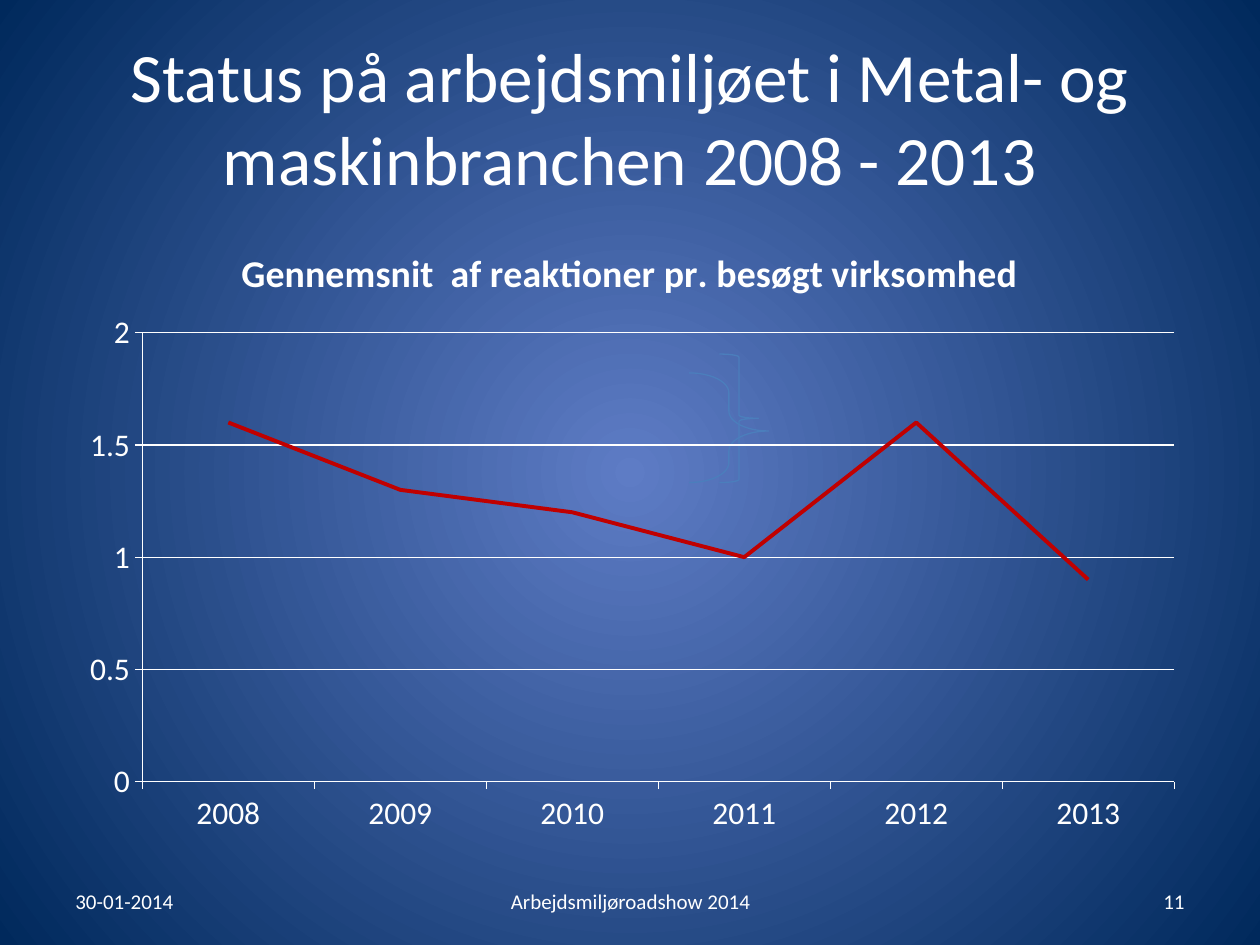
from dataclasses import dataclass

from lxml import etree
from pptx import Presentation
from pptx.chart.data import CategoryChartData
from pptx.dml.color import RGBColor
from pptx.enum.chart import XL_CHART_TYPE, XL_TICK_MARK
from pptx.enum.shapes import MSO_SHAPE
from pptx.enum.text import MSO_ANCHOR, PP_ALIGN
from pptx.oxml import parse_xml
from pptx.oxml.ns import nsdecls, qn
from pptx.slide import Slide
from pptx.util import Inches, Pt

LEFT, CENTER, RIGHT = PP_ALIGN.LEFT, PP_ALIGN.CENTER, PP_ALIGN.RIGHT
MIDDLE = MSO_ANCHOR.MIDDLE
RIGHT_BRACE = MSO_SHAPE.RIGHT_BRACE
LINE_STACKED = XL_CHART_TYPE.LINE_STACKED
TICK_OUTSIDE, TICK_NONE = XL_TICK_MARK.OUTSIDE, XL_TICK_MARK.NONE


@dataclass(frozen=True)
class Theme:
    font: str = "Calibri"
    text: RGBColor = RGBColor.from_string("FFFFFF")
    series: RGBColor = RGBColor.from_string("C00000")
    brace: RGBColor = RGBColor.from_string("4B7EBC")
    glow: RGBColor = RGBColor.from_string("5E7CC5")
    edge: RGBColor = RGBColor.from_string("00295C")
    title_size: float = 39.6
    chart_title_size: float = 21.6
    chart_size: float = 18
    footer_size: float = 12
    thin_line: float = 0.75
    series_line: float = 2.25


@dataclass(frozen=True)
class Frame:
    left: float
    top: float
    width: float
    height: float

    def lengths(self) -> tuple:
        return tuple(map(Inches, (self.left, self.top, self.width, self.height)))


@dataclass(frozen=True)
class Label:
    text: str
    frame: Frame
    size: float
    align: PP_ALIGN


@dataclass(frozen=True)
class Brace:
    frame: Frame
    curve: float
    tip: float


THEME = Theme()
FOOTER_TOP, FOOTER_HEIGHT = 6.95, 0.4

LABELS = (
    Label("Status på arbejdsmiljøet i Metal- og maskinbranchen 2008 - 2013",
          Frame(0.5, 0.3, 9, 1.25), THEME.title_size, CENTER),
    Label("30-01-2014", Frame(0.5, FOOTER_TOP, 2.33, FOOTER_HEIGHT),
          THEME.footer_size, LEFT),
    Label("Arbejdsmiljøroadshow 2014", Frame(3.42, FOOTER_TOP, 3.17, FOOTER_HEIGHT),
          THEME.footer_size, CENTER),
    Label("11", Frame(7.17, FOOTER_TOP, 2.33, FOOTER_HEIGHT),
          THEME.footer_size, RIGHT),
)
BRACES = (
    Brace(Frame(5.47, 2.96, 0.63, 0.87), 0.25, 0.53),
    Brace(Frame(5.71, 2.81, 0.31, 1.02), 0.08, 0.5),
)
CHART_FRAME = Frame(0.5, 1.75, 9, 4.95)
PLOT_AREA = {"x": 0.07, "y": 0.18, "w": 0.91, "h": 0.72}  # shares of the chart
CHART_TITLE = "Gennemsnit  af reaktioner pr. besøgt virksomhed"
REACTIONS = {"2008": 1.6, "2009": 1.3, "2010": 1.2,
             "2011": 1, "2012": 1.6, "2013": 0.9}


def style_font(font, size: float, bold: bool = False) -> None:
    font.name = THEME.font
    font.size = Pt(size)
    font.bold = bold
    font.color.rgb = THEME.text


def style_line(line, color: RGBColor, width: float) -> None:
    line.color.rgb = color
    line.width = Pt(width)


def paint_background(slide: Slide) -> None:
    fill = slide.background.fill
    fill.gradient()
    for stop, color in zip(fill.gradient_stops, (THEME.glow, THEME.edge)):
        stop.color.rgb = color
    # Radial gradient around the middle of the page
    gradient = next(slide.element.iter(qn("a:gradFill")))
    gradient.remove(gradient.find(qn("a:lin")))
    gradient.append(parse_xml(
        f'<a:path {nsdecls("a")} path="circle">'
        '<a:fillToRect l="50000" t="50000" r="50000" b="50000"/></a:path>'))


def add_label(slide: Slide, label: Label) -> None:
    box = slide.shapes.add_textbox(*label.frame.lengths())
    box.text_frame.word_wrap = True
    box.text_frame.vertical_anchor = MIDDLE
    para = box.text_frame.paragraphs[0]
    para.alignment = label.align
    span = para.add_run()
    span.text = label.text
    style_font(span.font, label.size)


def add_brace(slide: Slide, brace: Brace) -> None:
    shape = slide.shapes.add_shape(RIGHT_BRACE, *brace.frame.lengths())
    shape.shadow.inherit = False
    shape.fill.background()
    style_line(shape.line, THEME.brace, THEME.thin_line)
    shape.adjustments[0] = brace.curve
    shape.adjustments[1] = brace.tip


def fix_plot_area(chart) -> None:
    plot_area = next(chart.element.iter(qn("c:plotArea")))
    for old_layout in plot_area.findall(qn("c:layout")):
        plot_area.remove(old_layout)
    layout = etree.Element(qn("c:layout"))
    manual = etree.SubElement(layout, qn("c:manualLayout"))
    settings = {"layoutTarget": "inner", "xMode": "edge", "yMode": "edge", **PLOT_AREA}
    for name, value in settings.items():
        etree.SubElement(manual, qn(f"c:{name}")).set("val", str(value))
    plot_area.insert(0, layout)


def add_reaction_chart(slide: Slide) -> None:
    data = CategoryChartData()
    data.categories = list(REACTIONS)
    data.add_series("Series 1", list(REACTIONS.values()))
    chart = slide.shapes.add_chart(LINE_STACKED, *CHART_FRAME.lengths(), data).chart
    chart.has_legend = False
    style_font(chart.font, THEME.chart_size)

    # Heading
    chart.has_title = True
    chart.chart_title.include_in_layout = False
    span = chart.chart_title.text_frame.paragraphs[0].add_run()
    span.text = CHART_TITLE
    style_font(span.font, THEME.chart_title_size, bold=True)

    # Axes
    for axis in (chart.category_axis, chart.value_axis):
        axis.major_tick_mark = TICK_OUTSIDE
        axis.minor_tick_mark = TICK_NONE
        style_line(axis.format.line, THEME.text, THEME.thin_line)
    chart.category_axis.has_major_gridlines = False
    values = chart.value_axis
    values.minimum_scale, values.maximum_scale, values.major_unit = 0, 2, 0.5
    values.has_major_gridlines = True
    style_line(values.major_gridlines.format.line, THEME.text, THEME.thin_line)

    # Series
    chart.plots[0].vary_by_categories = False
    series = chart.plots[0].series[0]
    series.smooth = False
    style_line(series.format.line, THEME.series, THEME.series_line)
    fix_plot_area(chart)


def main() -> None:
    deck = Presentation()
    deck.slide_width, deck.slide_height = Inches(10), Inches(7.5)
    page = deck.slides.add_slide(deck.slide_layouts[6])
    paint_background(page)
    for label in LABELS:
        add_label(page, label)
    for brace in BRACES:
        add_brace(page, brace)
    add_reaction_chart(page)
    deck.save("out.pptx")


if __name__ == "__main__":
    main()
